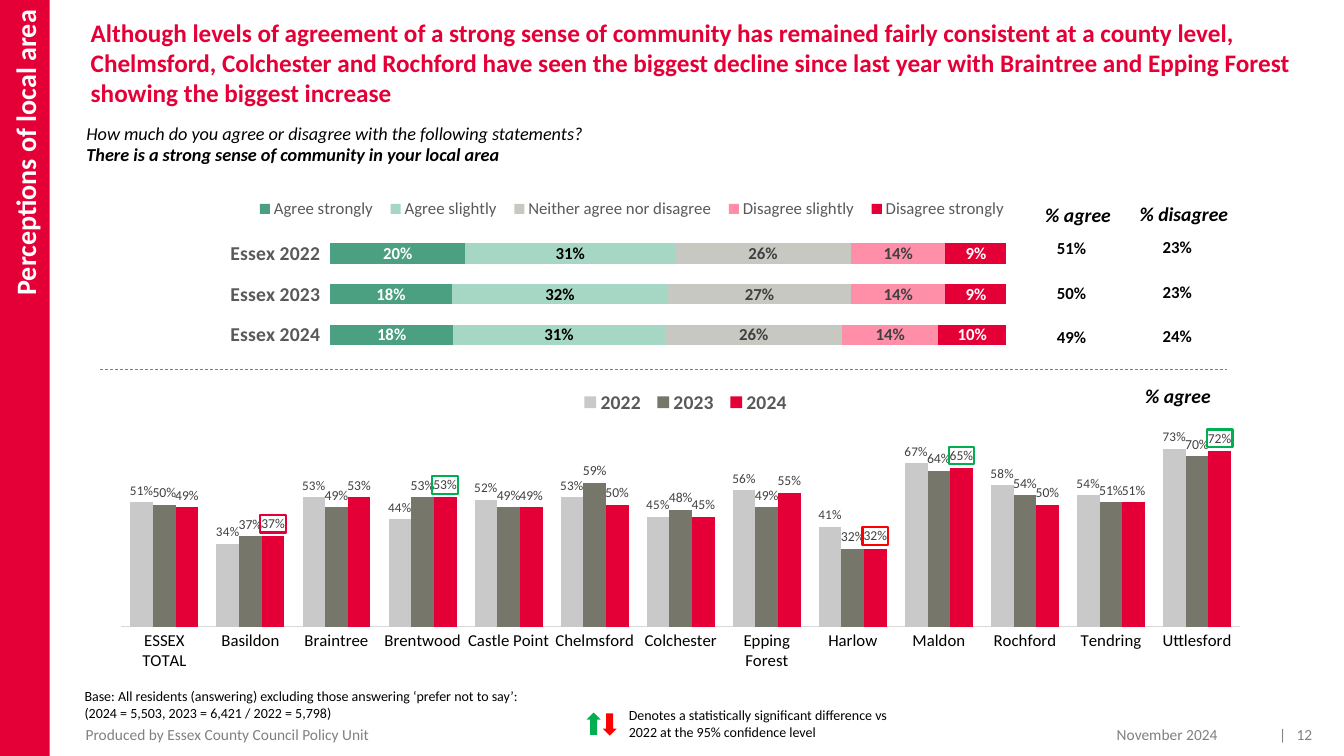
from lxml import etree
from pptx import Presentation
from pptx.chart.data import CategoryChartData
from pptx.dml.color import RGBColor
from pptx.enum.chart import XL_CHART_TYPE as ChartType, XL_LABEL_POSITION as LabelPosition
from pptx.enum.chart import XL_LEGEND_POSITION as LegendPosition, XL_TICK_MARK as TickMark
from pptx.enum.dml import MSO_LINE
from pptx.enum.shapes import MSO_CONNECTOR, MSO_SHAPE
from pptx.enum.text import MSO_ANCHOR as Anchor, MSO_AUTO_SIZE as AutoSize, PP_ALIGN as Align
from pptx.oxml import parse_xml
from pptx.oxml.ns import nsdecls, qn
from pptx.util import Pt

rgb = RGBColor.from_string
FONT = "Calibri"
RED, GREY, BLACK, WHITE, GREEN = "E40037", "808080", "000000", "FFFFFF", "00B050"


def write(frame, lines, size, color=BLACK, align=Align.LEFT, anchor=Anchor.TOP,
          margins=(7.2, 3.6, 7.2, 3.6), bold=False, italic=False, space_before=0):
    """Fill a text frame with one paragraph per line; margins run left, top, right, bottom."""
    frame.word_wrap = True
    frame.auto_size = AutoSize.NONE
    frame.vertical_anchor = anchor
    (frame.margin_left, frame.margin_top,
     frame.margin_right, frame.margin_bottom) = map(Pt, margins)
    for index, line in enumerate(lines):
        paragraph = frame.add_paragraph() if index else frame.paragraphs[0]
        paragraph.text = line
        paragraph.alignment = align
        paragraph.space_before = Pt(space_before)
        font = paragraph.font
        font.name, font.size, font.bold, font.italic = FONT, Pt(size), bold, italic
        font.color.rgb = rgb(color)


def place(element, position, box, inner=False):
    """Give a chart part a manual layout, as fractions of the chart."""
    for old in element.findall(qn("c:layout")):
        element.remove(old)
    target = '<c:layoutTarget val="inner"/>' if inner else ""
    modes = '<c:xMode val="edge"/><c:yMode val="edge"/>'
    sides = "".join(f'<c:{side} val="{value}"/>' for side, value in zip("xywh", box))
    element.insert(position, parse_xml(
        f'<c:layout {nsdecls("c")}><c:manualLayout>{target}{modes}{sides}'
        '</c:manualLayout></c:layout>'))


presentation = Presentation()
presentation.slide_width, presentation.slide_height = Pt(960), Pt(540)
slide = presentation.slides.add_slide(presentation.slide_layouts[5])
shapes = slide.shapes

# Title
title = shapes.title
title.left, title.top, title.width, title.height = Pt(57.6), Pt(8.6), Pt(882), Pt(85)
write(title.text_frame, [
    "Although levels of agreement of a strong sense of community has remained fairly "
    "consistent at a county level, Chelmsford, Colchester and Rochford have seen the biggest "
    "decline since last year with Braintree and Epping Forest showing the biggest increase"],
    18, RED, margins=(7.2, 3.6, 7.2, 0), bold=True)

# Sidebar and significance arrows
for kind, box, color in [
        (MSO_SHAPE.RECTANGLE, (0, 0, 35.5, 540), RED),
        (MSO_SHAPE.UP_ARROW, (419, 509, 10, 16), GREEN),
        (MSO_SHAPE.DOWN_ARROW, (430.5, 509.5, 10, 16), "FF0000")]:
    shape = shapes.add_shape(kind, *map(Pt, box))
    shape.shadow.inherit = False
    shape.fill.solid()
    shape.fill.fore_color.rgb = rgb(color)
    shape.line.fill.background()
    if kind == MSO_SHAPE.RECTANGLE:
        write(shape.text_frame, ["Perceptions of local area"], 20, WHITE, Align.RIGHT,
              Anchor.MIDDLE, (7.2, 7.2, 7.2, 3.6), bold=True)
        shape.text_frame._txBody.bodyPr.set("vert", "vert270")

# Charts
districts = ["ESSEX TOTAL", "Basildon", "Braintree", "Brentwood", "Castle Point", "Chelmsford",
             "Colchester", "Epping Forest", "Harlow", "Maldon", "Rochford", "Tendring",
             "Uttlesford"]
district_series = [
    ("2022", [51, 34, 53, 44, 52, 53, 45, 56, 41, 67, 58, 54, 73], "C9C9C9", "404040", 9.4),
    ("2023", [50, 37, 49, 53, 49, 59, 48, 49, 32, 64, 54, 51, 70], "76766B", "404040", 9.8),
    ("2024", [49, 37, 53, 53, 49, 50, 45, 55, 32, 65, 50, 51, 72], RED, "404040", 9.7)]
county_series = [
    ("Agree strongly", [18, 18, 20], "4AA081", WHITE, 12),
    ("Agree slightly", [31, 32, 31], "A6D6C4", BLACK, 12),
    ("Neither agree nor disagree", [26, 27, 26], "C8C8C3", "404040", 12),
    ("Disagree slightly", [14, 14, 14], "FF8EA9", "404040", 12),
    ("Disagree strongly", [10, 9, 9], RED, WHITE, 12)]
significant = {"Basildon": RED, "Brentwood": GREEN, "Harlow": "FF0000", "Maldon": GREEN,
               "Uttlesford": GREEN}

for kind, box, categories, rows, plot_box, legend_box in [
        (ChartType.COLUMN_CLUSTERED, (57.6, 248.4, 882, 230.4), districts, district_series,
         (0.033, 0.11, 0.906, 0.758), (0.4, 0.13, 0.18, 0.08)),
        (ChartType.BAR_STACKED_100, (71.3, 127.4, 661, 132.5),
         ["Essex 2024", "Essex 2023", "Essex 2022"], county_series,
         (0.249, 0.296, 0.738, 0.659), (0.16, 0.1, 0.83, 0.13))]:
    by_district = kind == ChartType.COLUMN_CLUSTERED
    data = CategoryChartData(number_format="0%")
    data.categories = categories
    for name, percents, *_ in rows:
        data.add_series(name, [percent / 100 for percent in percents])
    chart = shapes.add_chart(kind, *map(Pt, box), data).chart
    chart.has_title = False
    chart.font.name, chart.font.size = FONT, Pt(10)
    chart.has_legend = True
    legend = chart.legend
    legend.position = LegendPosition.TOP
    legend.include_in_layout = False
    legend.font.name, legend.font.size = FONT, Pt(14 if by_district else 12)
    legend.font.bold = by_district
    legend.font.color.rgb = rgb("595959")
    place(legend._element, 1, legend_box)
    place(chart._chartSpace.chart.plotArea, 0, plot_box, inner=True)

    value_axis, category_axis = chart.value_axis, chart.category_axis
    value_axis.minimum_scale = 0
    value_axis.maximum_scale = 1 if by_district else 1.01
    value_axis.has_major_gridlines = False
    value_axis.visible = False
    category_axis.major_tick_mark = TickMark.NONE if by_district else TickMark.OUTSIDE
    axis_font = category_axis.tick_labels.font
    axis_font.name, axis_font.size = FONT, Pt(12 if by_district else 14)
    axis_font.bold = not by_district
    axis_font.color.rgb = rgb(BLACK if by_district else "595959")
    if by_district:
        category_axis.format.line.color.rgb = rgb("D9D9D9")
        category_axis.format.line.width = Pt(0.75)
    else:
        category_axis.format.line.fill.background()

    plot = chart.plots[0]
    plot.vary_by_categories = False
    plot.gap_width, plot.overlap = (80, 0) if by_district else (100, 100)
    for series, (name, percents, color, label_color, label_size) in zip(plot.series, rows):
        series.format.fill.solid()
        series.format.fill.fore_color.rgb = rgb(color)
        labels = series.data_labels
        labels.show_value = True
        labels.number_format, labels.number_format_is_linked = "0%", False
        labels.position = LabelPosition.OUTSIDE_END if by_district else LabelPosition.CENTER
        fonts = [labels.font]
        if name == "2024":
            for district in significant:
                label = series.points[districts.index(district)].data_label
                fonts.append(label.font)
                label.position = LabelPosition.OUTSIDE_END
        for font in fonts:
            font.name, font.size, font.bold = FONT, Pt(label_size), not by_district
            font.color.rgb = rgb(label_color)
        for label in series._element.iter(qn("c:dLbl")):
            district = districts[int(label.find(qn("c:idx")).get("val"))]
            label.find(qn("c:txPr")).addprevious(parse_xml(
                f'<c:spPr {nsdecls("c", "a")}><a:noFill/><a:ln w="19050"><a:solidFill>'
                f'<a:srgbClr val="{significant[district]}"/></a:solidFill></a:ln></c:spPr>'))

# Divider
divider = shapes.add_connector(MSO_CONNECTOR.STRAIGHT, Pt(71.3), Pt(263.5), Pt(876.2), Pt(263.5))
divider.line.color.rgb = rgb("7F7F7F")
divider.line.width = Pt(0.5)
divider.line.dash_style = MSO_LINE.DASH
etree.SubElement(divider._element.spPr, qn("a:effectLst"))

# County totals
for left, top, totals in [(742.3, 130.3, ["51%", "50%", "49%"]),
                          (817.9, 129.6, ["23%", "23%", "24%"])]:
    table = shapes.add_table(4, 1, Pt(left), Pt(top), Pt(46), Pt(126.8)).table
    table.first_row = table.horz_banding = False
    for cell in table.iter_cells():
        cell.fill.background()
    for row, total in enumerate(totals, start=1):
        cell = table.cell(row, 0)
        cell.vertical_anchor = Anchor.MIDDLE
        paragraph = cell.text_frame.paragraphs[0]
        paragraph.text = total
        paragraph.alignment = Align.CENTER
        paragraph.font.name, paragraph.font.size, paragraph.font.bold = FONT, Pt(12), True
        paragraph.font.color.rgb = rgb(BLACK)

# Text boxes
heading = dict(size=14, align=Align.CENTER, bold=True, italic=True, space_before=6)
footer = dict(size=11, color=GREY, anchor=Anchor.MIDDLE)
footer_right = dict(footer, align=Align.RIGHT, margins=(7.2, 3.6, 0, 3.6))
for box, lines, style in [
        ((54.7, 83.5, 869, 54.7),
         ["How much do you agree or disagree with the following statements?",
          "There is a strong sense of community in your local area"],
         dict(size=13, italic=True)),
        ((712.1, 141.1, 116, 24.5), ["% agree"], heading),
        ((787.7, 140.4, 116, 24.5), ["% disagree"], heading),
        ((783.4, 270.7, 116, 24.5), ["% agree"], heading),
        ((53.3, 487.4, 346.3, 31.7),
         ["Base: All residents (answering) excluding those answering ‘prefer not to say’: "
          "(2024 = 5,503, 2023 = 6,421 / 2022 = 5,798)"], dict(size=10)),
        ((442.1, 501.1, 206.6, 31.7),
         ["Denotes a statistically significant difference vs 2022 at the 95% confidence level"],
         dict(size=10)),
        ((54.7, 519.1, 470.9, 10.8), ["Produced by Essex County Council Policy Unit"],
         dict(footer, margins=(6.5, 3.6, 7.2, 3.6))),
        ((697, 519.1, 172.8, 10.8), ["November 2024"], footer_right),
        ((876.2, 519.1, 61.2, 10.8), ["|\u00a0\u00a0 12".replace("\u00a0", " ")], footer_right)]:
    frame = shapes.add_textbox(*map(Pt, box)).text_frame
    write(frame, lines, **style)
    if len(lines) == 2:
        frame.paragraphs[1].font.bold = True

presentation.save("out.pptx")
